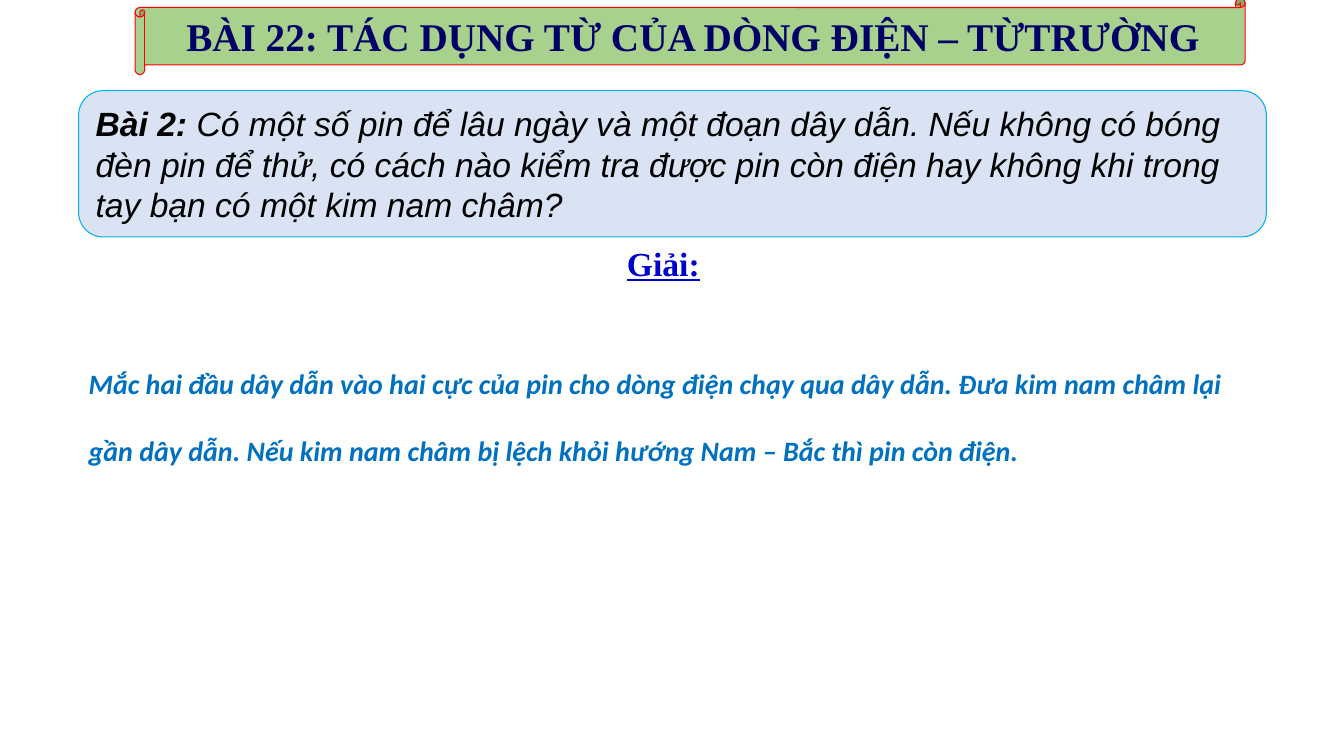
from pptx import Presentation
from pptx.dml.color import RGBColor
from pptx.enum.shapes import MSO_SHAPE
from pptx.enum.text import MSO_ANCHOR, PP_ALIGN
from pptx.util import Inches, Pt

SCROLL = MSO_SHAPE.HORIZONTAL_SCROLL
ROUNDED = MSO_SHAPE.ROUNDED_RECTANGLE
TOP, MIDDLE = MSO_ANCHOR.TOP, MSO_ANCHOR.MIDDLE
LEFT, CENTER, JUSTIFY = PP_ALIGN.LEFT, PP_ALIGN.CENTER, PP_ALIGN.JUSTIFY

BLACK = RGBColor(0x00, 0x00, 0x00)
NAVY = RGBColor(0x00, 0x00, 0x66)
BLUE = RGBColor(0x00, 0x00, 0xCC)
ANSWER_BLUE = RGBColor(0x00, 0x70, 0xC0)
SKY = RGBColor(0x00, 0xB0, 0xF0)
PALE_BLUE = RGBColor(0xDA, 0xE3, 0xF3)
GREEN = RGBColor(0xA9, 0xD1, 0x8E)
RED = RGBColor(0xFF, 0x00, 0x00)
SERIF = "Times New Roman"


def add_text(paragraph, text, font="Arial", size=24, color=BLACK,
             bold=False, italic=False, underline=False):
    run = paragraph.add_run()
    run.text = text
    run.font.name = font
    run.font.size = Pt(size)
    run.font.color.rgb = color
    run.font.bold = bold
    run.font.italic = italic
    run.font.underline = underline


class ExerciseSlide:
    """Holds the exercise slide and its shared style."""

    def __init__(self, presentation):
        self.slide = presentation.slides.add_slide(presentation.slide_layouts[5])
        self.shapes = self.slide.shapes

    def first_paragraph(self, shape, align=LEFT, anchor=TOP):
        frame = shape.text_frame
        frame.word_wrap = True
        frame.vertical_anchor = anchor
        paragraph = frame.paragraphs[0]
        paragraph.alignment = align
        return paragraph

    def panel(self, kind, left, top, width, height, fill, line):
        shape = self.shapes.add_shape(
            kind, Inches(left), Inches(top), Inches(width), Inches(height))
        shape.shadow.inherit = False
        shape.fill.solid()
        shape.fill.fore_color.rgb = fill
        shape.line.color.rgb = line
        shape.line.width = Pt(0.75)
        return self.first_paragraph(shape, anchor=MIDDLE)

    def text_box(self, left, top, width, height, align=LEFT):
        shape = self.shapes.add_textbox(
            Inches(left), Inches(top), Inches(width), Inches(height))
        return self.first_paragraph(shape, align)

    def title(self, left, top, width, height):
        shape = self.shapes.title
        shape.left, shape.top = Inches(left), Inches(top)
        shape.width, shape.height = Inches(width), Inches(height)
        frame = shape.text_frame
        frame.margin_top = frame.margin_bottom = 0
        self.shapes._spTree.append(shape._element)
        return self.first_paragraph(shape, CENTER, MIDDLE)


def main():
    presentation = Presentation()
    presentation.slide_width = Inches(13.33)
    presentation.slide_height = Inches(7.5)
    exercise = ExerciseSlide(presentation)

    heading = exercise.text_box(6.12, 2.36, 2.08, 0.5, JUSTIFY)
    add_text(heading, "Giải:", font=SERIF, color=BLUE, bold=True, underline=True)

    answer = exercise.text_box(0.78, 3.25, 11.78, 2.02)
    answer.line_spacing = 2.0
    add_text(answer, "Mắc hai đầu dây dẫn vào hai cực của pin cho dòng điện chạy qua "
             "dây dẫn. Đưa kim nam châm lại gần dây dẫn. Nếu kim nam châm bị lệch "
             "khỏi hướng Nam – Bắc thì pin còn điện.",
             font="Calibri", size=20, color=ANSWER_BLUE, bold=True, italic=True)

    exercise.panel(SCROLL, 1.34, -0.02, 11.01, 0.76, GREEN, RED)
    title = exercise.title(1.44, 0.07, 10.86, 0.58)
    add_text(title, "BÀI 22: TÁC DỤNG TỪ CỦA DÒNG ĐIỆN – TỪTRƯỜNG",
             font=SERIF, size=28, color=NAVY, bold=True)

    question = exercise.panel(ROUNDED, 0.78, 0.9, 11.78, 1.45, PALE_BLUE, SKY)
    add_text(question, "Bài 2: ", bold=True, italic=True)
    add_text(question, "Có một số pin để lâu ngày và một đoạn dây dẫn. Nếu không có "
             "bóng đèn pin để thử, có cách nào kiểm tra được pin còn điện hay không "
             "khi trong tay bạn có một kim nam châm?", italic=True)

    presentation.save("out.pptx")


if __name__ == "__main__":
    main()
